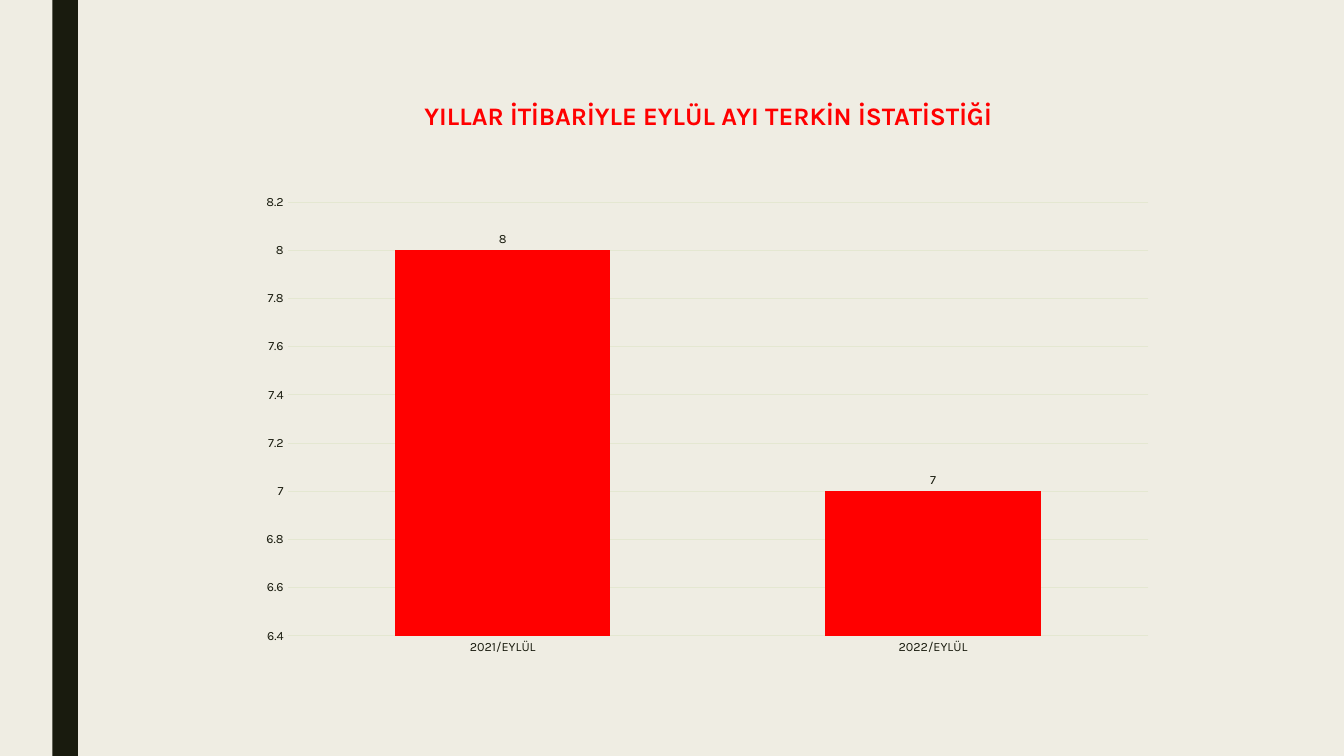
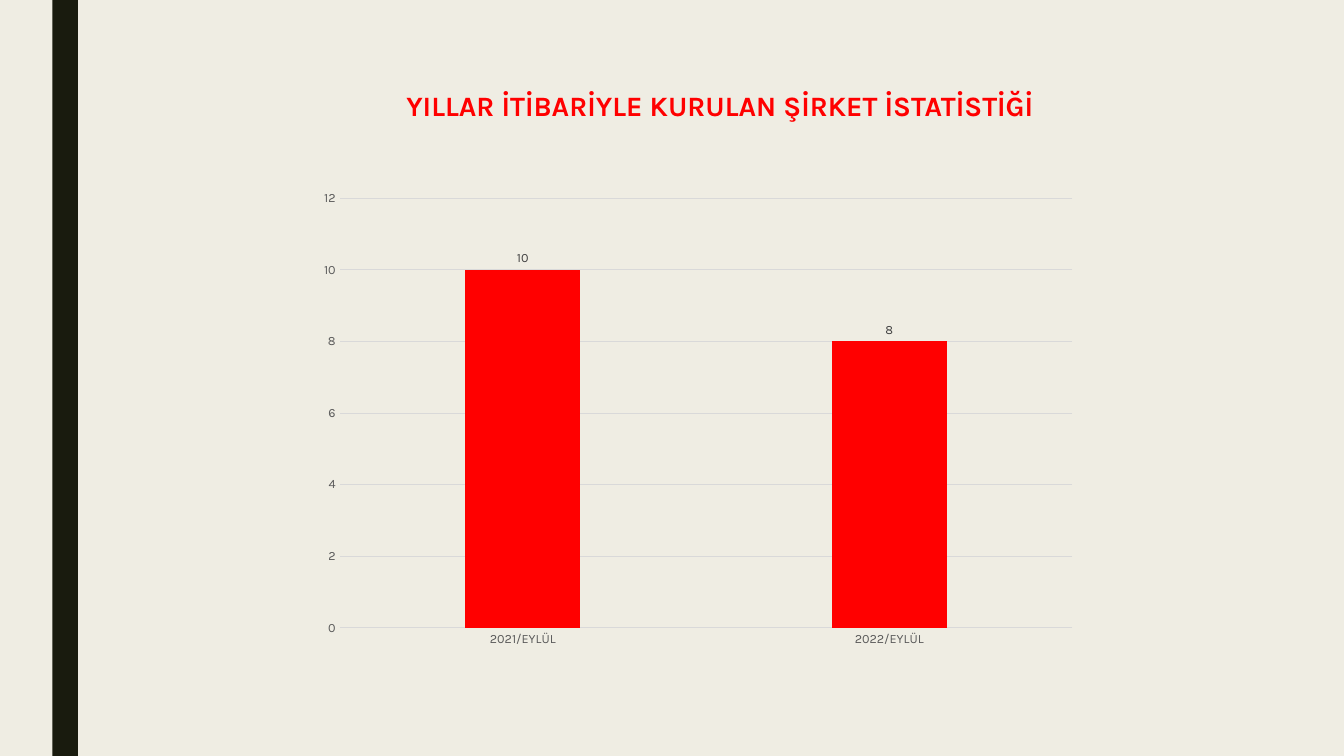
from pptx import Presentation
from pptx.chart.data import CategoryChartData
from pptx.dml.color import RGBColor
from pptx.enum.chart import XL_CHART_TYPE, XL_LABEL_POSITION, XL_TICK_MARK
from pptx.enum.shapes import MSO_SHAPE
from pptx.enum.text import MSO_ANCHOR, PP_ALIGN
from pptx.util import Inches, Pt

FONT = "Karla"
COLORS = {
    "background": "EFEDE3",
    "band": "191B0E",
    "accent": "FF0000",
    "sage": "E4E7D1",
    "silver": "D9D9D9",
    "gray": "595959",
    "charcoal": "404040",
}
BAND_BOX = (3.9, 0, 1.9, 100)
CATEGORIES = ("2021/EYLÜL", "2022/EYLÜL")
SLIDES = (
    {
        "title": "YILLAR İTİBARİYLE EYLÜL AYI TERKİN İSTATİSTİĞİ",
        "title_size": 18,
        "title_box": (27.9, 13.1, 49.6, 7),
        "chart_box": (18.45, 24.5, 68.35, 63.35),
        "values": (8, 7),
        "scale": {"minimum_scale": 6.4, "maximum_scale": 8.2, "major_unit": 0.2},
        "bars": {"gap_width": 100, "overlap": -24},
        "axis_color": "band",
        "label_color": "band",
        "line_color": "sage",
    },
    {
        "title": "YILLAR İTİBARİYLE KURULAN ŞİRKET İSTATİSTİĞİ",
        "title_size": 20,
        "title_box": (28.3, 11.6, 50.55, 6.8),
        "chart_box": (22.95, 24, 58, 62.8),
        "values": (10, 8),
        "scale": {"minimum_scale": 0, "maximum_scale": 12, "major_unit": 2},
        "bars": {"gap_width": 219, "overlap": -27},
        "axis_color": "gray",
        "label_color": "charcoal",
        "line_color": "silver",
    },
)


def color(name):
    """Return the named palette colour."""
    return RGBColor.from_string(COLORS[name])


def apply(target, values):
    """Set each attribute of the target from a dict."""
    for name, value in values.items():
        setattr(target, name, value)


def style_font(font, size, color_name, bold=False):
    """Give a font the deck's typeface with a size and colour."""
    apply(font, {"name": FONT, "size": Pt(size), "bold": bold})
    font.color.rgb = color(color_name)


def style_line(line, color_name):
    """Draw a thin line in the named colour."""
    line.color.rgb = color(color_name)
    line.width = Pt(0.75)


def place(presentation, box):
    """Turn percentages of the slide into left, top, width and height."""
    sides = (presentation.slide_width, presentation.slide_height) * 2
    return [round(side * share / 100) for side, share in zip(sides, box)]


def add_band(slide, box):
    """Draw the dark vertical band."""
    band = slide.shapes.add_shape(MSO_SHAPE.RECTANGLE, *box)
    band.shadow.inherit = False
    band.fill.solid()
    band.fill.fore_color.rgb = color("band")
    band.line.fill.background()


def add_title(slide, box, text, size):
    """Write the centred red heading."""
    frame = slide.shapes.add_textbox(*box).text_frame
    apply(frame, {"word_wrap": True, "vertical_anchor": MSO_ANCHOR.TOP})
    paragraph = frame.paragraphs[0]
    apply(paragraph, {"text": text, "alignment": PP_ALIGN.CENTER, "line_spacing": 0.89})
    style_font(paragraph.runs[0].font, size, "accent", True)


def add_column_chart(slide, box, content):
    """Add the yearly column chart with value labels."""
    data = CategoryChartData()
    data.categories = CATEGORIES
    data.add_series("Series 1", content["values"])
    chart = slide.shapes.add_chart(XL_CHART_TYPE.COLUMN_CLUSTERED, *box, data).chart
    apply(chart, {"has_legend": False, "has_title": False})
    style_font(chart.font, 10, "band")

    for axis in (chart.category_axis, chart.value_axis):
        apply(axis, {"major_tick_mark": XL_TICK_MARK.NONE, "minor_tick_mark": XL_TICK_MARK.NONE})
        style_font(axis.tick_labels.font, 9, content["axis_color"])
    style_line(chart.category_axis.format.line, content["line_color"])
    apply(chart.value_axis, content["scale"])
    chart.value_axis.format.line.fill.background()
    style_line(chart.value_axis.major_gridlines.format.line, content["line_color"])

    plot = chart.plots[0]
    apply(plot, {**content["bars"], "vary_by_categories": False, "has_data_labels": True})
    apply(plot.data_labels, {"show_value": True, "position": XL_LABEL_POSITION.OUTSIDE_END})
    style_font(plot.data_labels.font, 9, content["label_color"])
    fill = plot.series[0].format.fill
    fill.solid()
    fill.fore_color.rgb = color("accent")


def add_chart_slide(presentation, content):
    """Build one slide with band, heading and chart."""
    slide = presentation.slides.add_slide(presentation.slide_layouts[6])
    add_band(slide, place(presentation, BAND_BOX))
    add_title(slide, place(presentation, content["title_box"]), content["title"], content["title_size"])
    add_column_chart(slide, place(presentation, content["chart_box"]), content)


def main():
    """Build and save the presentation."""
    presentation = Presentation()
    apply(presentation, {"slide_width": Inches(13.33), "slide_height": Inches(7.5)})
    background = presentation.slide_master.background.fill
    background.solid()
    background.fore_color.rgb = color("background")
    for content in SLIDES:
        add_chart_slide(presentation, content)
    presentation.save("out.pptx")


if __name__ == "__main__":
    main()
